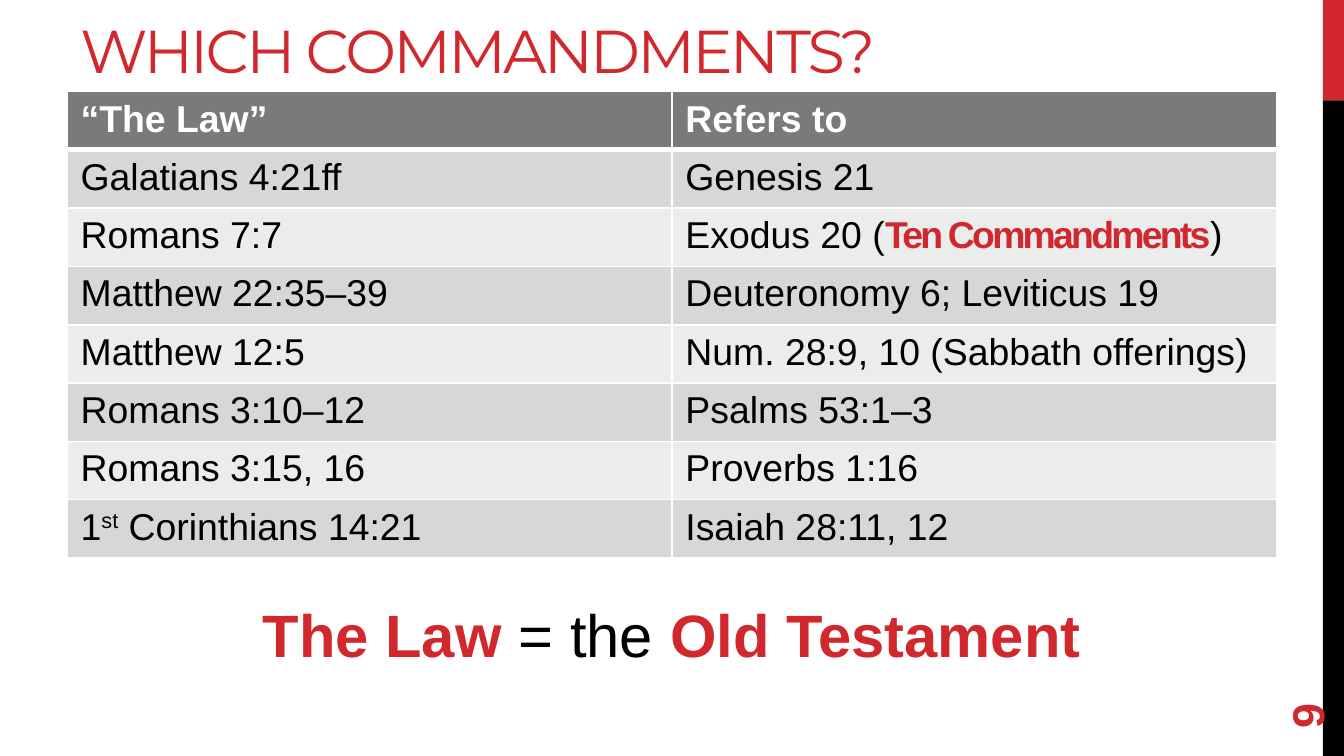
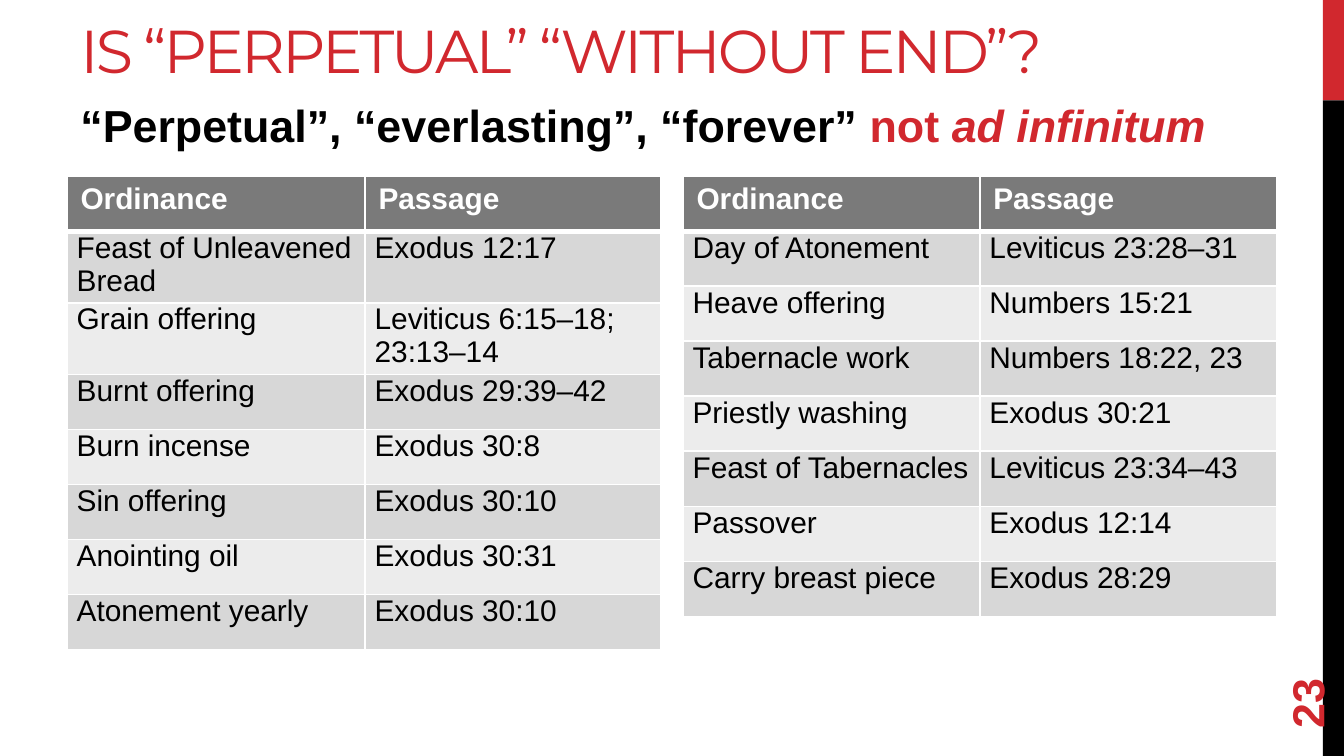
import pptx
import pptx.dml.color
import pptx.enum.shapes
import pptx.enum.text
import pptx.oxml
import pptx.oxml.ns
import pptx.util
from pptx.util import Cm, Pt

COLORS = {
    "red": "D1282E",
    "black": "000000",
    "white": "FFFFFF",
    "header": "7A7A7A",
    "odd": "D7D7D7",
    "even": "ECECEC",
}
RGB = {name: pptx.dml.color.RGBColor.from_string(value) for name, value in COLORS.items()}
LEFT, WIDTH = 1.27, 22.86
ROW_HEIGHT = 1.04


def write(frame, runs, size, color="black", bold=False, font="Arial"):
    paragraph = frame.paragraphs[0]
    paragraph.font.name = font
    paragraph.font.size = Pt(size)
    paragraph.font.bold = bold
    paragraph.font.color.rgb = RGB[color]
    for text, marks in [(runs, "")] if isinstance(runs, str) else runs:
        if "break" in marks:
            paragraph.add_line_break()
        run = paragraph.add_run()
        run.text = text
        if "red" in marks:
            run.font.color.rgb = RGB["red"]
        if "bold" in marks:
            run.font.bold = True
        if "italic" in marks:
            run.font.italic = True
        if "tight" in marks:
            run.font._element.set("spc", "-150")
        if "super" in marks:
            run.font._element.set("baseline", "30000")
    return paragraph


def add_grid(slide, left, top, widths, rows, size, compact=False):
    grid = slide.shapes.add_table(
        len(rows), len(widths), Cm(left), Cm(top), Cm(sum(widths)), Cm(ROW_HEIGHT * len(rows))
    ).table
    for column, width in zip(grid.columns, widths):
        column.width = Cm(width)
    for r, row in enumerate(rows):
        grid.rows[r].height = Cm(ROW_HEIGHT)
        for c, runs in enumerate(row):
            cell = grid.cell(r, c)
            header = r == 0
            properties = cell._tc.get_or_add_tcPr()
            for side in "LRTB":
                thick = (side == "B" and header) or (side == "T" and r == 1)
                properties.append(pptx.oxml.parse_xml(
                    f'<a:ln{side} {pptx.oxml.ns.nsdecls("a")} w="{Pt(3 if thick else 1)}">'
                    f'<a:solidFill><a:srgbClr val="{COLORS["white"]}"/></a:solidFill></a:ln{side}>'
                ))
            cell.fill.solid()
            cell.fill.fore_color.rgb = RGB["header" if header else "odd" if r % 2 else "even"]
            if compact and not header:
                cell.margin_left = cell.margin_right = Cm(0.18)
                cell.margin_top = cell.margin_bottom = 0
            write(cell.text_frame, runs, size, "white" if header else "black", header)


deck = pptx.Presentation()
deck.slide_width, deck.slide_height = Cm(25.4), Cm(14.29)

slides = []
for title, number in [("WHICH COMMANDMENTS?", "9"), ("IS “PERPETUAL” “WITHOUT END”?", "23")]:
    slide = deck.slides.add_slide(deck.slide_layouts[6])
    slides.append(slide)
    for color, top, height in [("red", 0, 1.9), ("black", 1.9, 12.39)]:
        band = slide.shapes.add_shape(
            pptx.enum.shapes.MSO_SHAPE.RECTANGLE, Cm(25), Cm(top), Cm(0.4), Cm(height)
        )
        band.shadow.inherit = False
        band.fill.solid()
        band.fill.fore_color.rgb = RGB[color]
        band.line.fill.background()

    heading = slide.shapes.add_textbox(Cm(LEFT), Cm(0.18), Cm(WIDTH), Cm(1.52))
    write(heading.text_frame, [(title, "tight")], 32.4, "red", font="Montserrat")
    page = slide.shapes.add_textbox(Cm(23.32), Cm(12.14), Cm(2.74), Cm(1.02))
    page.rotation = 270
    write(page.text_frame, number, 24, "red", True)
    for box in (heading, page):
        box.text_frame.word_wrap = True
        box.text_frame.vertical_anchor = pptx.enum.text.MSO_ANCHOR.MIDDLE

law_slide, perpetual_slide = slides

law_references = [
    ("“The Law”", "Refers to"),
    ("Galatians 4:21ff", "Genesis 21"),
    ("Romans 7:7", [("Exodus 20 (", ""), ("Ten Commandments", "red bold tight"), (")", "")]),
    ("Matthew 22:35–39", "Deuteronomy 6; Leviticus 19"),
    ("Matthew 12:5", "Num. 28:9, 10 (Sabbath offerings)"),
    ("Romans 3:10–12", "Psalms 53:1–3"),
    ("Romans 3:15, 16", "Proverbs 1:16"),
    ([("1", ""), ("st", "super"), (" Corinthians 14:21", "")], "Isaiah 28:11, 12"),
]
add_grid(law_slide, LEFT, 1.73, [WIDTH / 2] * 2, law_references, 20)

conclusion = law_slide.shapes.add_textbox(Cm(LEFT), Cm(11.18), Cm(WIDTH), Cm(1.63))
conclusion.text_frame.word_wrap = True
equation = write(
    conclusion.text_frame,
    [("The Law ", "red bold"), ("= the ", ""), ("Old Testament", "red bold")],
    32,
)
equation.alignment = pptx.enum.text.PP_ALIGN.CENTER

claim = perpetual_slide.shapes.add_textbox(Cm(LEFT), Cm(1.73), Cm(WIDTH), Cm(11.99))
claim.text_frame.word_wrap = True
statement = write(
    claim.text_frame,
    [("“Perpetual”, “everlasting”, “forever” ", ""), ("not ", "red"), ("ad infinitum", "red italic")],
    24,
    bold=True,
)
statement.space_before, statement.space_after = Pt(4.8), Pt(6)

ordinance_header = ("Ordinance", "Passage")
later_ordinances = [
    ordinance_header,
    ("Day of Atonement", "Leviticus 23:28–31"),
    ("Heave offering", "Numbers 15:21"),
    ("Tabernacle work", "Numbers 18:22, 23"),
    ("Priestly washing", "Exodus 30:21"),
    ("Feast of Tabernacles", "Leviticus 23:34–43"),
    ("Passover", "Exodus 12:14"),
    ("Carry breast piece", "Exodus 28:29"),
]
first_ordinances = [
    ordinance_header,
    ("Feast of Unleavened Bread", "Exodus 12:17"),
    ("Grain offering", [("Leviticus 6:15–18; ", ""), ("23:13–14", "break")]),
    ("Burnt offering", "Exodus 29:39–42"),
    ("Burn incense", "Exodus 30:8"),
    ("Sin offering", "Exodus 30:10"),
    ("Anointing oil", "Exodus 30:31"),
    ("Atonement yearly", "Exodus 30:10"),
]
add_grid(perpetual_slide, 12.91, 3.33, [5.61, 5.61], later_ordinances, 16, compact=True)
add_grid(perpetual_slide, LEFT, 3.33, [5.63, 5.59], first_ordinances, 16, compact=True)

deck.save("out.pptx")
